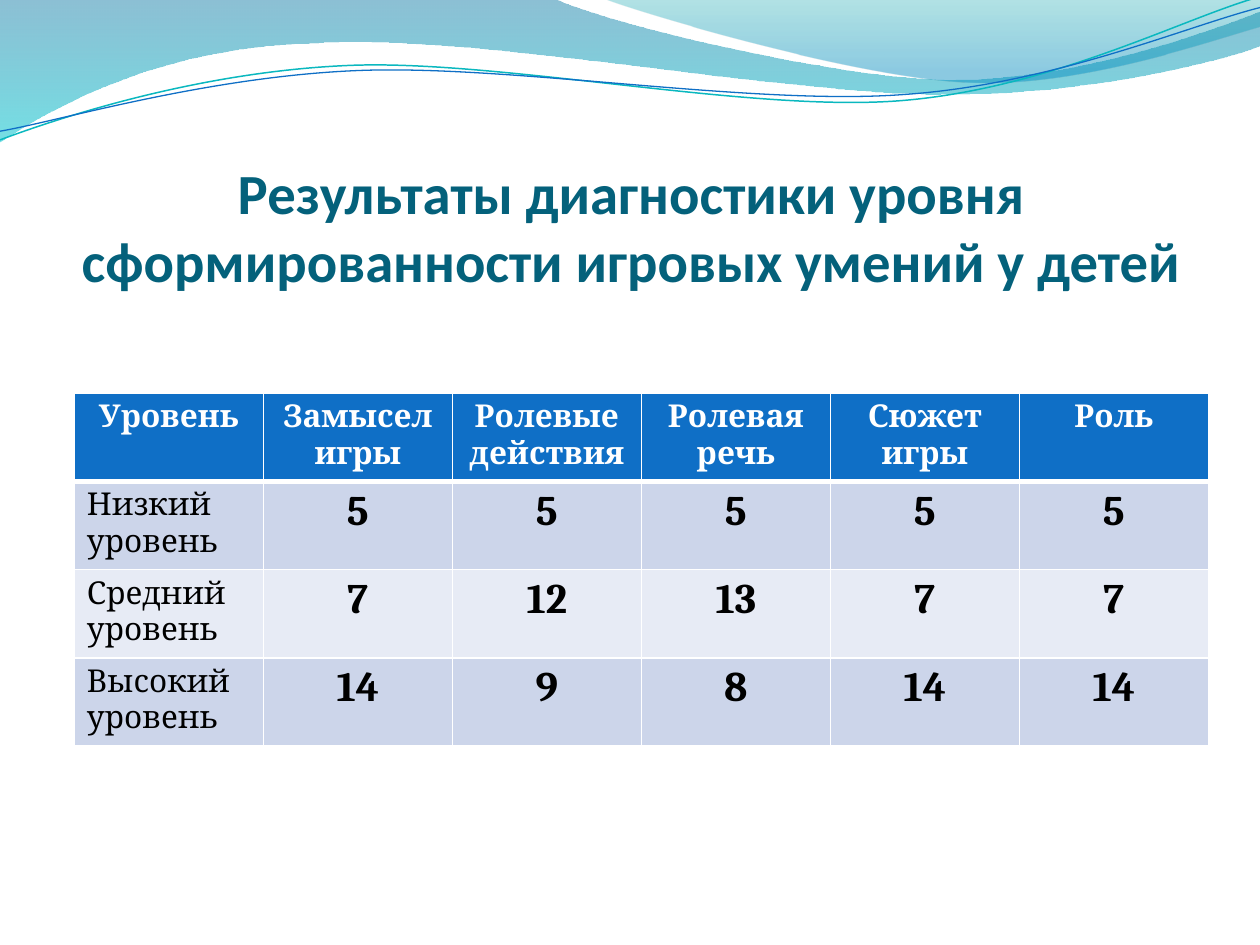
from lxml import etree
from pptx import Presentation
from pptx.dml.color import RGBColor
from pptx.enum.text import MSO_ANCHOR, PP_ALIGN
from pptx.oxml.ns import qn
from pptx.util import Pt

CENTER, LEFT = PP_ALIGN.CENTER, PP_ALIGN.LEFT
BOTTOM = MSO_ANCHOR.BOTTOM
BLANK_LAYOUT = 6
CURVE_TILT = -2.7
ROW_HEIGHT = 29.5

COLORS = {
    "title": "04617B", "header": "0F6FC6", "white": "FFFFFF", "black": "000000",
    "odd_row": "CCD5EA", "even_row": "E7EBF5",
    "back_top": "0074A1", "back_bottom": "00C6CF",
    "front_top": "00A1A9", "front_bottom": "008BBF",
    "teal_line": "0AB8BF", "blue_line": "0F6FC6",
}

# Outlines in points: a pair is a straight step, three pairs are a Bezier curve
BACK_WAVE = [
    (0, 0), (316.8, -0.7),
    ((342.7, 12.2), (478.1, 45.4), (545.8, 45.4)),
    ((614.2, 45.4), (689.8, 18.7), (720, 6.5)),
    (720.7, 25.9),
    ((707.8, 31.7), (626.4, 54.7), (537.1, 54)),
    ((446.4, 54), (275, 20.2), (185, 24.5)),
    ((92.9, 25.9), (33.1, 59.8), (-0.7, 81.4)),
]
FRONT_WAVE = [
    (344.9, -0.7),
    ((366.5, 7.9), (491, 44.6), (553.7, 46.8)),
    ((616.3, 49.7), (691.9, 23), (720, 15.1)),
    (720, 0),
]
# Curves are given level and tilted afterwards
TEAL_CURVE = [
    (-1.4, 63),
    ((33.8, 51.7), (114.1, 29.4), (199.8, 29.9)),
    ((284.9, 30.3), (425.8, 67.3), (512.4, 64.9)),
    ((599, 62.4), (676.5, 25.7), (720.2, 15.5)),
]
BLUE_CURVE = [
    (-1.1, 58),
    ((32.9, 53.8), (118.3, 32.5), (204.1, 33)),
    ((290.6, 33.4), (428.9, 63.8), (515.5, 61.4)),
    ((601.3, 59.6), (678.4, 30.1), (721.4, 21.3)),
]

TITLE = "Результаты диагностики уровня сформированности игровых умений у детей"
ROWS = [
    ["Уровень", "Замысел игры", "Ролевые действия", "Ролевая речь", "Сюжет игры", "Роль"],
    ["Низкий уровень", "5", "5", "5", "5", "5"],
    ["Средний уровень", "7", "12", "13", "7", "7"],
    ["Высокий уровень", "14", "9", "8", "14", "14"],
]


def color(name):
    return RGBColor.from_string(COLORS[name])


def add_outline(page, outline, close):
    parts = [[part] if len(part) == 2 else part for part in outline]
    points = [(Pt(x), Pt(y)) for part in parts for x, y in part]
    builder = page.shapes.build_freeform(*points[0])
    builder.add_line_segments(points[1:], close=close)
    shape = builder.convert_to_shape()
    shape.shadow.inherit = False

    # Join every three steps of a curve into one Bezier segment
    steps = iter(list(shape._element.iter(qn("a:lnTo"))))
    for part in parts[1:]:
        segment = [next(steps) for _ in part]
        if len(segment) == 3:
            curve = etree.Element(qn("a:cubicBezTo"))
            segment[0].addprevious(curve)
            for step in segment:
                curve.append(step[0])
                step.getparent().remove(step)
    return shape


def add_wave(page, outline, stops):
    """Each stop is (position, colour, opacity in percent)."""
    shape = add_outline(page, outline, True)
    shape.line.fill.background()
    shape.fill.gradient()
    shape.fill.gradient_angle = 270
    for stop, (position, name, _) in zip(shape.fill.gradient_stops, stops):
        stop.position = position
        stop.color.rgb = color(name)
    tones = shape._element.spPr.iter(qn("a:srgbClr"))
    for tone, (_, _, opacity) in zip(tones, stops):
        etree.SubElement(tone, qn("a:alpha"), val=str(opacity * 1000))


def add_curve(page, outline, name, width):
    shape = add_outline(page, outline, False)
    shape.rotation = CURVE_TILT
    shape.fill.background()
    shape.line.color.rgb = color(name)
    shape.line.width = Pt(width)


def style_paragraph(para, font, size, name, bold, align):
    para.alignment = align
    para.font.name = font
    para.font.size = Pt(size)
    para.font.bold = bold
    para.font.color.rgb = color(name)


def add_title(page):
    box = page.shapes.add_textbox(Pt(36.7), Pt(94.3), Pt(648), Pt(73.4))
    frame = box.text_frame
    frame.word_wrap = True
    frame.vertical_anchor = BOTTOM
    frame.margin_left = frame.margin_right = frame.margin_bottom = 0
    frame.margin_top = Pt(3.6)
    frame.text = TITLE
    style_paragraph(frame.paragraphs[0], "Calibri", 32.4, "title", True, CENTER)


def set_borders(cell, widths):
    properties = cell._tc.get_or_add_tcPr()
    for index, (side, width) in enumerate(widths.items()):
        line = etree.Element(qn("a:" + side), w=str(Pt(width)))
        fill = etree.SubElement(line, qn("a:solidFill"))
        etree.SubElement(fill, qn("a:srgbClr"), val=COLORS["white"])
        properties.insert(index, line)


def add_results_table(page):
    table = page.shapes.add_table(len(ROWS), len(ROWS[0]), Pt(42.5), Pt(224.6),
                                  Pt(648), Pt(ROW_HEIGHT * len(ROWS))).table
    for r, texts in enumerate(ROWS):
        for c, text in enumerate(texts):
            cell = table.cell(r, c)
            cell.text = text
            header, label = r == 0, c == 0
            fill = "header" if header else "odd_row" if r % 2 else "even_row"
            cell.fill.solid()
            cell.fill.fore_color.rgb = color(fill)
            style_paragraph(cell.text_frame.paragraphs[0], "Cambria",
                            18 if header or label else 24,
                            "white" if header else "black",
                            header or not label,
                            LEFT if label and not header else CENTER)
            set_borders(cell, {"lnL": 1, "lnR": 1, "lnT": 3 if r == 1 else 1,
                               "lnB": 3 if header else 1})


def main():
    deck = Presentation()
    deck.slide_width, deck.slide_height = Pt(720), Pt(540)
    page = deck.slides.add_slide(deck.slide_layouts[BLANK_LAYOUT])

    # Wave decoration along the top
    add_wave(page, BACK_WAVE, [(0, "back_top", 45), (1, "back_bottom", 55)])
    add_wave(page, FRONT_WAVE, [(0, "front_top", 30), (0.8, "front_bottom", 45)])
    add_curve(page, TEAL_CURVE, "teal_line", 0.85)
    add_curve(page, BLUE_CURVE, "blue_line", 0.75)

    # Title and results
    add_title(page)
    add_results_table(page)
    deck.save("out.pptx")


if __name__ == "__main__":
    main()
